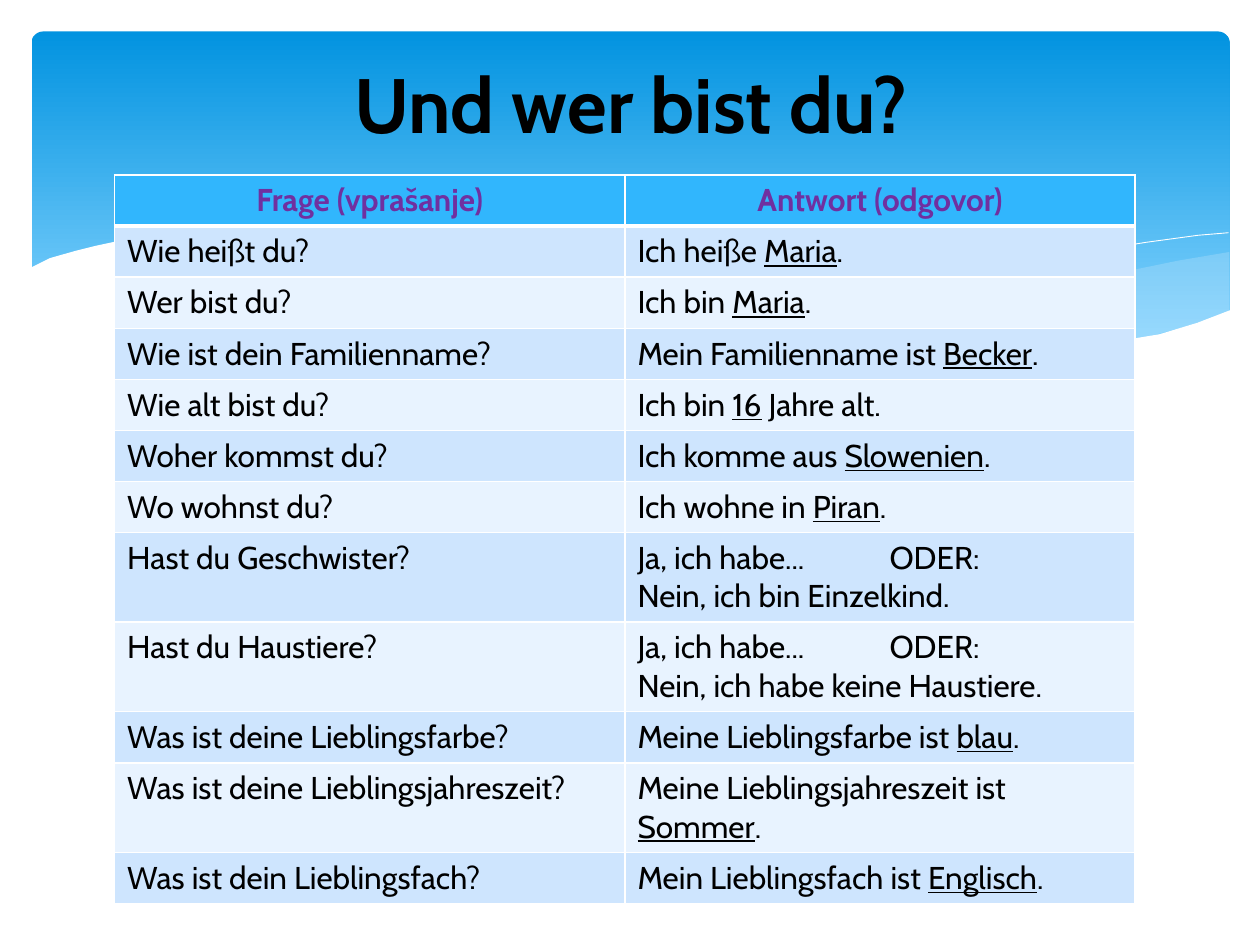
from lxml.etree import SubElement
from pptx import Presentation
from pptx.dml.color import RGBColor
from pptx.enum.shapes import MSO_SHAPE as SHAPE
from pptx.enum.text import MSO_ANCHOR as ANCHOR, PP_ALIGN as ALIGN
from pptx.oxml.ns import qn
from pptx.util import Pt

FONT = "Cabin"
COLORS = {
    "sky_top": "0293E0", "sky_bottom": "83D3FE", "mist": "C6E7FC",
    "white": "FFFFFF", "black": "000000", "purple": "7030A0",
    "header": "31B6FD", "odd": "CEE5FE", "even": "E8F3FF",
}

RIGHT_WAVE = [(686, 11.5), (656.5, 16.5), (625, 23), (603.5, 28), (563, 38), (525.5, 46),
              (492, 52.5), (459.5, 58.5), (491, 62.5), (528.5, 66), (569.5, 67.5),
              (605, 65.5), (635, 61), (661.5, 54), (686, 45.5)]
MIDDLE_WAVE = [(626.5, 64), (586, 58.5), (541.5, 50.5), (492, 40.5), (436.5, 27.5),
               (393, 17.5), (353.5, 10), (318, 5), (286, 2), (257, 0.5), (231, 1.5),
               (189.5, 5), (229.5, 11), (274.5, 19.5), (306.5, 27.5), (365, 40.5),
               (416, 51), (462, 59), (503.5, 65), (548.5, 67.5), (587, 67.5)]
FALLING_LINE = [(206, 8), (231, 4.5), (272, 2), (307.5, 3), (350.5, 6), (402.5, 11.5),
                (462, 21), (507, 30), (556, 41), (609, 55.5), (636.5, 63.5)]
RISING_LINE = [(425, 52.5), (467.5, 41), (522, 28), (564, 18.5), (607, 11), (638.5, 6),
               (668, 2), (685.5, 0.5)]
FRONT_WAVE = [(687, 44.5), (667.5, 52), (646, 58.5), (622, 62.5), (595.5, 65.5), (566, 67),
              (531.5, 65.5), (493, 62), (450, 56), (400, 47.5), (345.5, 35.5), (305.5, 26),
              (265, 16.5), (228, 9.5), (193.5, 4.5), (163.5, 1.5), (135.5, 0), (111, 0),
              (88.5, 0.5), (69, 2), (52, 5), (38, 8), (26, 11), (12, 15), (0, 21),
              (0, 104.5), (687, 104.5)]

HEADINGS = ("Frage (vprašanje)", "Antwort (odgovor)")
DIALOGUE = [
    ("Wie heißt du?", "Ich heiße _Maria_."),
    ("Wer bist du?", "Ich bin _Maria_."),
    ("Wie ist dein Familienname?", "Mein Familienname ist _Becker_."),
    ("Wie alt bist du?", "Ich bin _16_ Jahre alt."),
    ("Woher kommst du?", "Ich komme aus _Slowenien_."),
    ("Wo wohnst du?", "Ich wohne in _Piran_."),
    ("Hast du Geschwister?", "Ja, ich habe...\tODER:\nNein, ich bin Einzelkind."),
    ("Hast du Haustiere?", "Ja, ich habe...\tODER:\nNein, ich habe keine Haustiere."),
    ("Was ist deine Lieblingsfarbe?", "Meine Lieblingsfarbe ist _blau_."),
    ("Was ist deine Lieblingsjahreszeit?", "Meine Lieblingsjahreszeit ist _Sommer_."),
    ("Was ist dein Lieblingsfach?", "Mein Lieblingsfach ist _Englisch_."),
]


def rgb(name):
    """Return the named colour."""
    return RGBColor.from_string(COLORS[name])


def style_run(r, size, color, bold):
    """Format one run of text."""
    r.font.name, r.font.size, r.font.bold = FONT, Pt(size), bold
    r.font.color.rgb = rgb(color)


def add_outline(s, left, top, points, closed):
    """Add a freeform through points given relative to left and top."""
    corners = [(Pt(left + x), Pt(top + y)) for x, y in points]
    builder = s.shapes.build_freeform(*corners[0], scale=1.0)
    builder.add_line_segments(corners[1:], close=closed)
    sp = builder.convert_to_shape()
    sp.shadow.inherit = False
    return sp


def add_wave(s, left, top, points, color, opacity=100):
    """Add a filled wave."""
    sp = add_outline(s, left, top, points, True)
    sp.line.fill.background()
    sp.fill.solid()
    sp.fill.fore_color.rgb = rgb(color)
    if opacity < 100:
        tint = sp.fill._xPr.find(".//" + qn("a:srgbClr"))
        SubElement(tint, qn("a:alpha")).set("val", str(opacity * 1000))


def add_wave_line(s, left, top, points):
    """Add a thin white curve."""
    sp = add_outline(s, left, top, points, False)
    sp.fill.background()
    sp.line.color.rgb = rgb("white")
    sp.line.width = Pt(0.5)


def add_sky(s, left, top, width, height):
    """Add the gradient panel with the waves along its lower edge."""
    sp = s.shapes.add_shape(SHAPE.ROUNDED_RECTANGLE, Pt(left), Pt(top), Pt(width), Pt(height))
    sp.adjustments[0] = 0.034
    sp.shadow.inherit = False
    sp.line.fill.background()
    sp.fill.gradient()
    sp.fill.gradient_angle = 270
    for stop, color, position in zip(sp.fill.gradient_stops, ("sky_top", "sky_bottom"), (0, 0.9)):
        stop.color.rgb = rgb(color)
        stop.position = position
    x, y = left - 1.4, top + 114.5
    add_wave(s, x, y, RIGHT_WAVE, "mist", 29)
    add_wave(s, x, y, MIDDLE_WAVE, "mist", 40)
    add_wave_line(s, x, y, FALLING_LINE)
    add_wave_line(s, x, y, RISING_LINE)
    add_wave(s, x, y, FRONT_WAVE, "white")


def set_borders(cell, bottom):
    """Give a cell white borders, with its own width at the bottom."""
    tcPr = cell._tc.get_or_add_tcPr()
    for i, (side, width) in enumerate((("L", 1), ("R", 1), ("T", 1), ("B", bottom))):
        ln = tcPr.makeelement(qn("a:ln" + side), {"w": str(Pt(width))})
        fill = SubElement(ln, qn("a:solidFill"))
        SubElement(fill, qn("a:srgbClr")).set("val", COLORS["white"])
        tcPr.insert(i, ln)


def fill_cell(cell, text, fill, color, heading):
    """Write a cell, underlining what stands between underscores."""
    cell.fill.solid()
    cell.fill.fore_color.rgb = rgb(fill)
    set_borders(cell, 3 if heading else 1)
    tf = cell.text_frame
    for i, line in enumerate(text.split("\n")):
        p = tf.add_paragraph() if i else tf.paragraphs[0]
        p.alignment = ALIGN.CENTER if heading else ALIGN.LEFT
        if "\t" in line:
            tabs = SubElement(p._p.get_or_add_pPr(), qn("a:tabLst"))
            SubElement(tabs, qn("a:tab"), pos=str(Pt(144)), algn="l")
        for j, part in enumerate(line.split("_")):
            r = p.add_run()
            r.text = part
            style_run(r, 18, color, heading)
            r.font.underline = j % 2 == 1


def add_dialogue(s, left, top, width, row_height):
    """Add the table of questions and answers."""
    rows = [HEADINGS] + DIALOGUE
    table = s.shapes.add_table(len(rows), 2, Pt(left), Pt(top), Pt(width),
                               Pt(row_height * len(rows))).table
    for i, row in enumerate(rows):
        fill = "header" if i == 0 else "odd" if i % 2 else "even"
        for j, text in enumerate(row):
            fill_cell(table.cell(i, j), text, fill, "black" if i else "purple", i == 0)


def place_title(s, left, top, width, height):
    """Place the title in front of everything else."""
    sp = s.shapes.title
    sp.left, sp.top, sp.width, sp.height = Pt(left), Pt(top), Pt(width), Pt(height)
    tf = sp.text_frame
    tf.text = "Und wer bist du?"
    tf.vertical_anchor = ANCHOR.MIDDLE
    p = tf.paragraphs[0]
    p.alignment = ALIGN.CENTER
    style_run(p.runs[0], 44, "black", True)
    sp._element.getparent().append(sp._element)


def main():
    """Build the slide and save it."""
    prs = Presentation()
    prs.slide_width, prs.slide_height = Pt(720), Pt(540)
    s = prs.slides.add_slide(prs.slide_layouts[5])
    add_sky(s, 18, 18, 684.7, 194.4)
    add_dialogue(s, 65.5, 100, 583.2, 29.2)
    place_title(s, 36.7, 9.4, 648, 98.6)
    prs.save("out.pptx")


if __name__ == "__main__":
    main()
